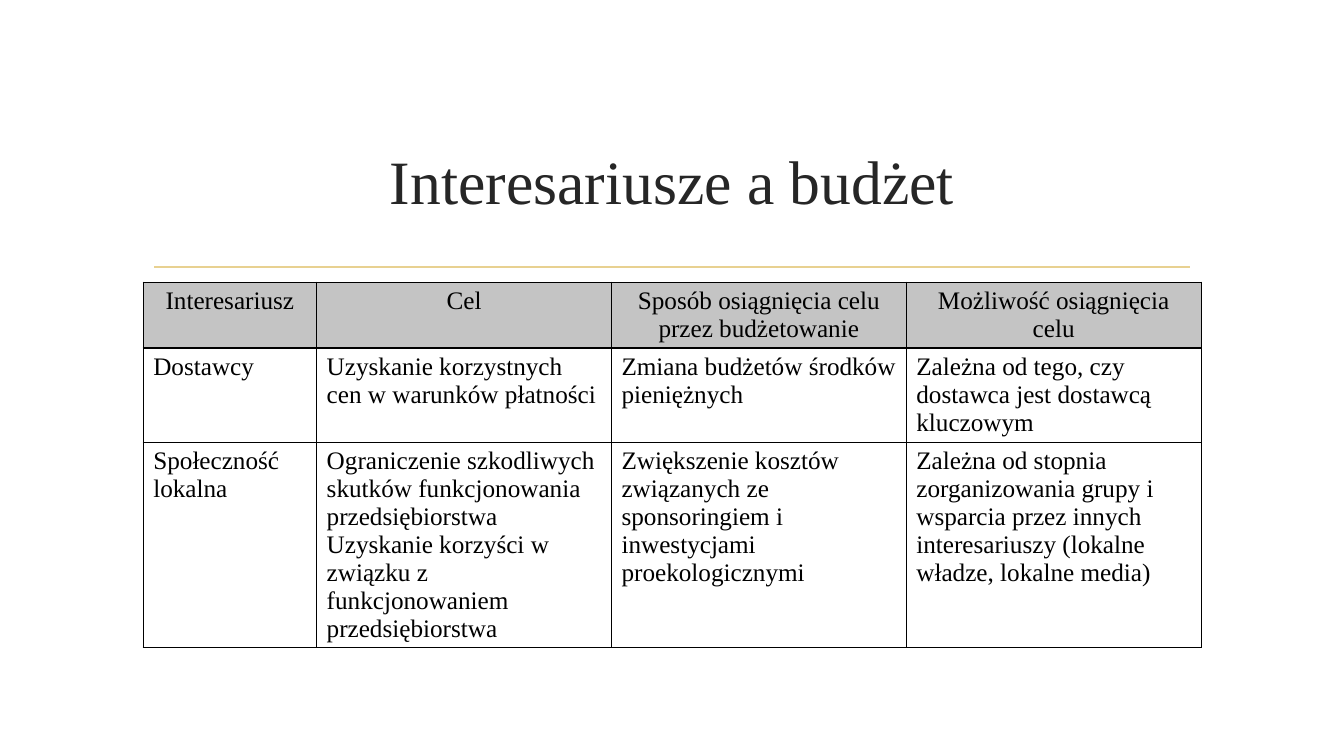
from lxml import etree
from pptx import Presentation
from pptx.dml.color import RGBColor
from pptx.enum import shapes, text
from pptx.oxml import ns
from pptx.util import Cm, Pt

BLACK = RGBColor(0x00, 0x00, 0x00)
DARK = RGBColor(0x26, 0x26, 0x26)
GOLD = RGBColor(0xE8, 0xD1, 0x91)
GREY = RGBColor(0xC4, 0xC4, 0xC4)
FONT = "Times New Roman"

COL_WIDTHS = [4.37, 7.43, 7.43, 7.43]
ROW_HEIGHTS = [1.64, 2.37, 5.18]
# A newline in a cell starts a new paragraph
ROWS = [
    ["Interesariusz", "Cel", "Sposób osiągnięcia celu przez budżetowanie",
     "Możliwość osiągnięcia celu"],
    ["Dostawcy", "Uzyskanie korzystnych cen w warunków płatności",
     "Zmiana budżetów środków pieniężnych",
     "Zależna od tego, czy dostawca jest dostawcą kluczowym"],
    ["Społeczność lokalna",
     "Ograniczenie szkodliwych skutków funkcjonowania przedsiębiorstwa\n"
     "Uzyskanie korzyści w związku z funkcjonowaniem przedsiębiorstwa",
     "Zwiększenie kosztów związanych ze sponsoringiem i inwestycjami "
     "proekologicznymi",
     "Zależna od stopnia zorganizowania grupy i wsparcia przez innych "
     "interesariuszy (lokalne władze, lokalne media)"],
]


def write(tf, content, size=18, color=BLACK, align=text.PP_ALIGN.LEFT):
    tf.word_wrap = True
    for i, line in enumerate(content.split("\n")):
        p = tf.paragraphs[0] if i == 0 else tf.add_paragraph()
        p.alignment = align
        r = p.add_run()
        r.text = line
        r.font.name = FONT
        r.font.size = Pt(size)
        r.font.color.rgb = color


def add_title(slide, content):
    sp = slide.shapes.title
    sp.left, sp.top, sp.width, sp.height = Cm(3.61), Cm(2.72), Cm(26.67), Cm(3.63)
    tf = sp.text_frame
    tf.vertical_anchor = text.MSO_ANCHOR.MIDDLE
    write(tf, content, size=44, color=DARK, align=text.PP_ALIGN.CENTER)
    tf.auto_size = text.MSO_AUTO_SIZE.NONE


def add_rule(slide, x1, x2, y):
    line = slide.shapes.add_connector(
        shapes.MSO_CONNECTOR.STRAIGHT, Cm(x1), Cm(y), Cm(x2), Cm(y))
    line.line.color.rgb = GOLD
    line.line.width = Pt(1.25)
    etree.SubElement(line._element.spPr, ns.qn("a:effectLst"))


def set_borders(cell, color=BLACK, width=1):
    tc_pr = cell._tc.get_or_add_tcPr()
    for side in ("lnL", "lnR", "lnT", "lnB"):
        ln = etree.SubElement(tc_pr, ns.qn("a:" + side), w=str(Pt(width)))
        fill = etree.SubElement(ln, ns.qn("a:solidFill"))
        etree.SubElement(fill, ns.qn("a:srgbClr"), val=str(color))


def add_stakeholder_table(slide):
    table = slide.shapes.add_table(
        len(ROWS), len(COL_WIDTHS), Cm(3.61), Cm(7.11),
        Cm(sum(COL_WIDTHS)), Cm(sum(ROW_HEIGHTS))).table
    table.horz_banding = False
    for column, width in zip(table.columns, COL_WIDTHS):
        column.width = Cm(width)
    for i, (row, height) in enumerate(zip(table.rows, ROW_HEIGHTS)):
        row.height = Cm(height)
        header = i == 0
        align = text.PP_ALIGN.CENTER if header else text.PP_ALIGN.LEFT
        for cell, content in zip(row.cells, ROWS[i]):
            set_borders(cell)
            if header:
                cell.fill.solid()
                cell.fill.fore_color.rgb = GREY
            else:
                cell.fill.background()
            write(cell.text_frame, content, align=align)
            for r in (r for p in cell.text_frame.paragraphs for r in p.runs):
                r.font.bold = False


def main():
    prs = Presentation()
    prs.slide_width, prs.slide_height = Cm(33.87), Cm(19.05)
    slide = prs.slides.add_slide(prs.slide_layouts[5])

    # Heading and the rule below it
    add_title(slide, "Interesariusze a budżet")
    add_rule(slide, 3.89, 30, 6.73)

    # Stakeholders, their goals and means
    add_stakeholder_table(slide)

    prs.save("out.pptx")


if __name__ == "__main__":
    main()
